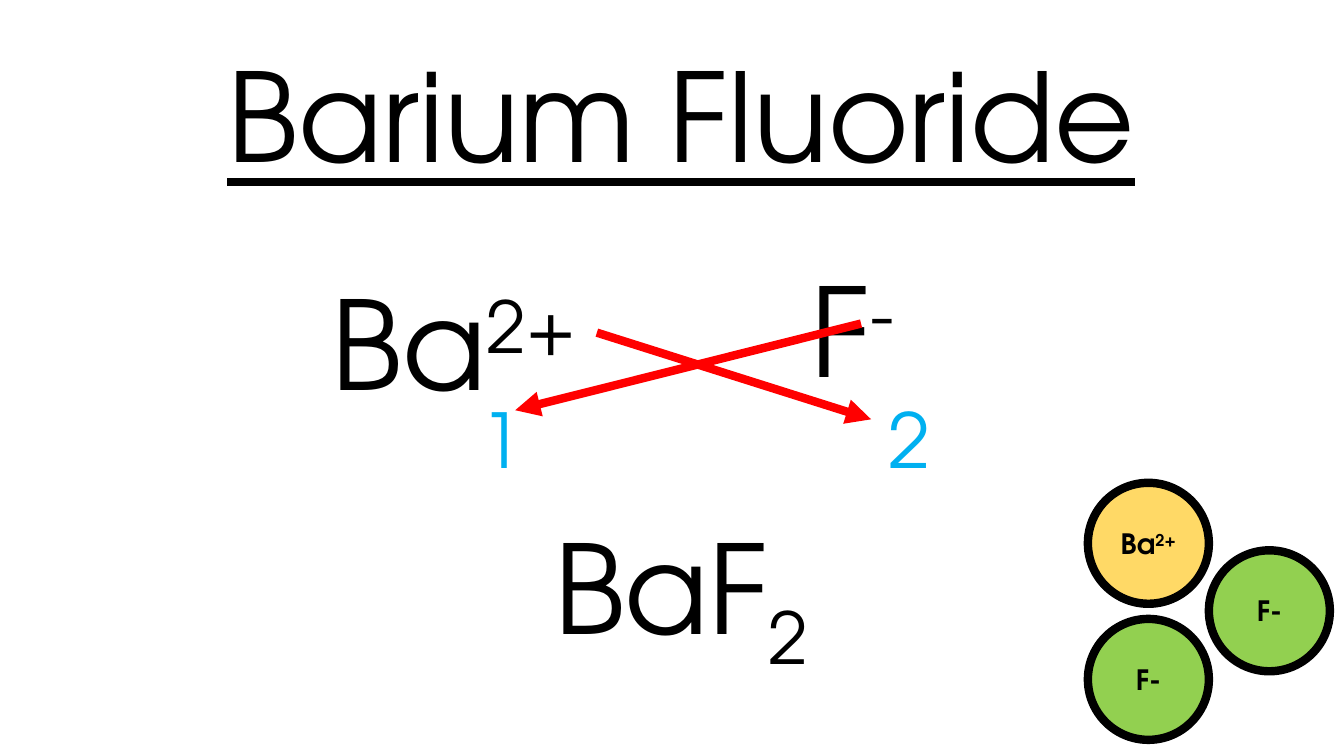
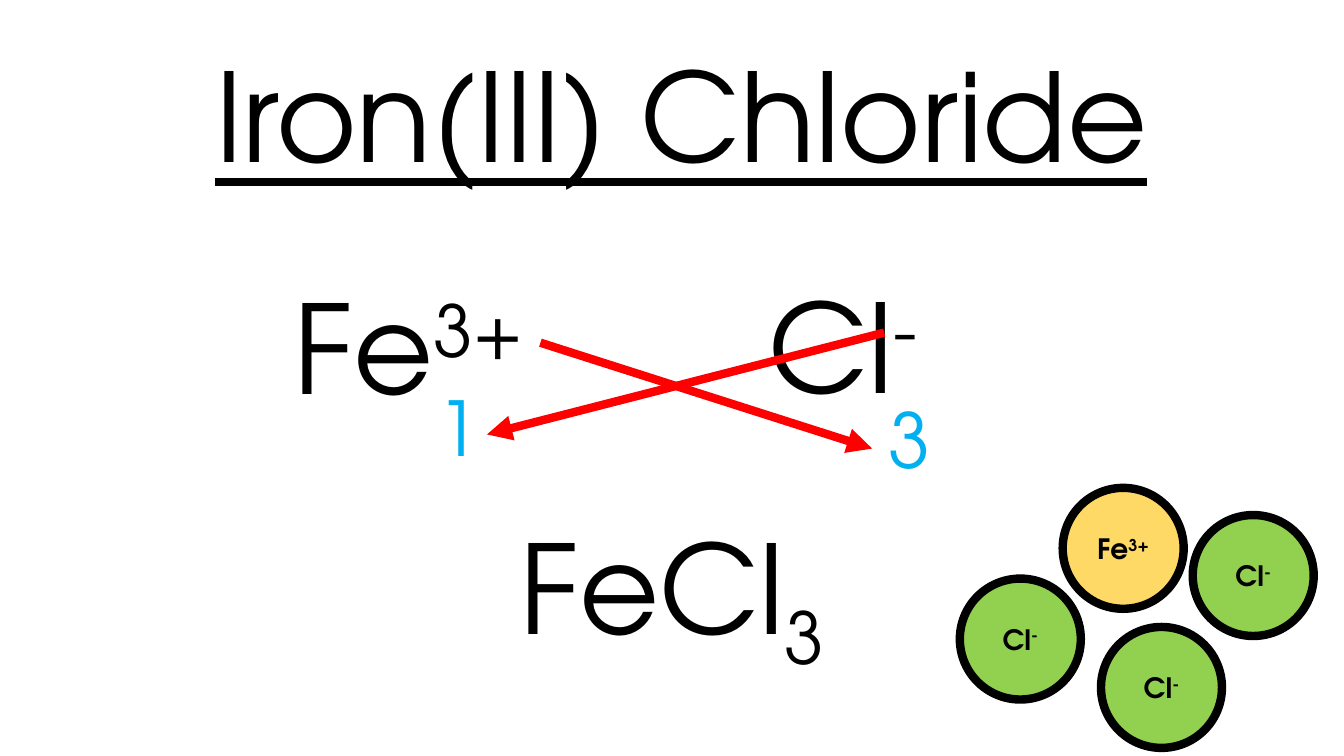
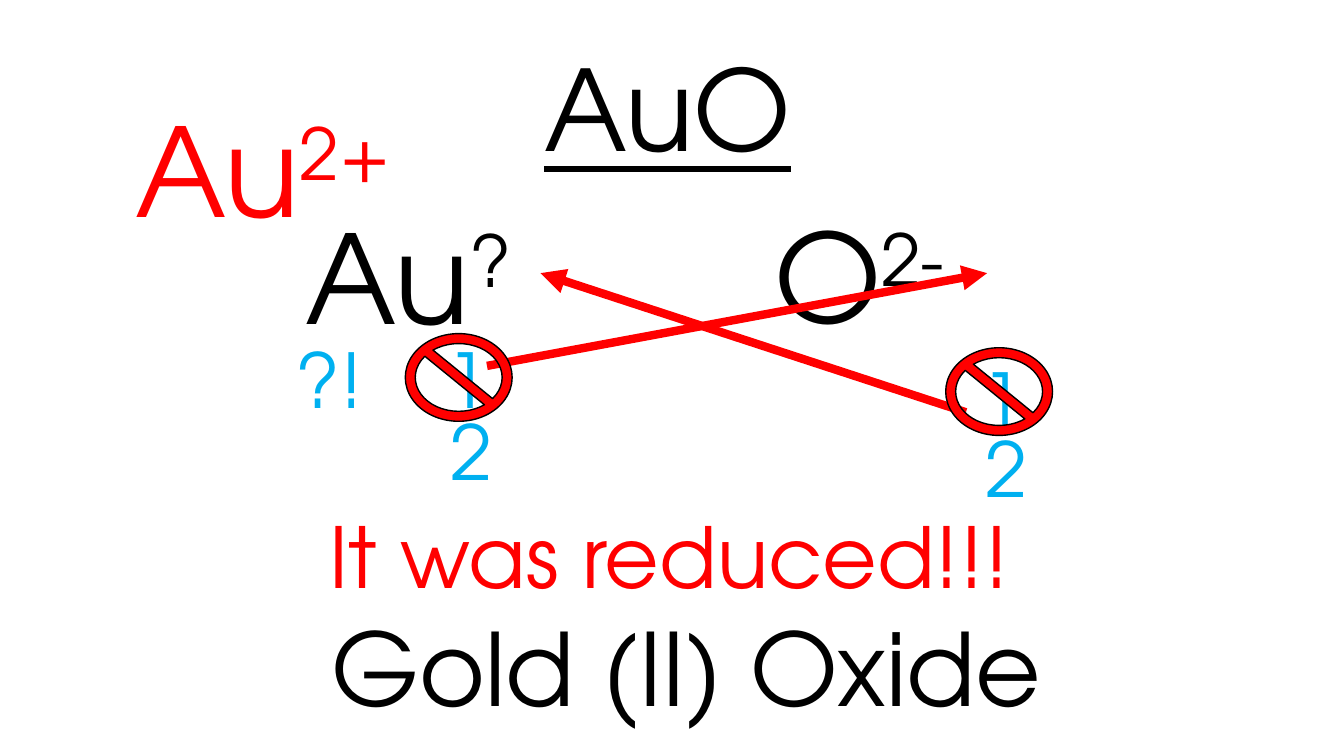
"""Builds three slides on working out ionic formulas by crossing charges."""
from lxml import etree
from pptx import Presentation
from pptx.dml.color import RGBColor
from pptx.enum.shapes import MSO_CONNECTOR, MSO_SHAPE
from pptx.enum.text import MSO_ANCHOR, MSO_AUTO_SIZE, PP_ALIGN
from pptx.oxml.ns import qn
from pptx.util import Inches, Pt

STRAIGHT = MSO_CONNECTOR.STRAIGHT
OVAL, BAN = MSO_SHAPE.OVAL, MSO_SHAPE.NO_SYMBOL
TOP, MIDDLE = MSO_ANCHOR.TOP, MSO_ANCHOR.MIDDLE
FIT = MSO_AUTO_SIZE.SHAPE_TO_FIT_TEXT
CENTER, RIGHT = PP_ALIGN.CENTER, PP_ALIGN.RIGHT

FONT = "TeX Gyre Adventor"
COLORS = {
    "ink": "000000",
    "alert": "FF0000",
    "digit": "00B0F0",
    "cation": "FFD966",
    "anion": "92D050",
}
BASELINES = {"^": "30000", "_": "-25000"}
HEIGHTS = {54: 1.01, 60: 1.11, 72: 1.31, 80: 1.45, 88: 1.58}
TITLE_LEFT, TITLE_TOP = 0.09, 0.34
SLIDE_WIDTH, SLIDE_HEIGHT = 13.33, 7.5
ION_DIAMETER = 1.2
DIGIT_WIDTH = 3.49
BAN_WIDTH, BAN_HEIGHT = 1.06, 0.87


def color(name):
    """Return the named palette colour."""
    return RGBColor.from_string(COLORS[name])


def write(frame, text, size=88, ink="ink", align=CENTER, bold=False, underline=False):
    """Write one paragraph, with ^ raising and _ lowering what follows."""
    frame.word_wrap = True
    paragraph = frame.paragraphs[0]
    paragraph.alignment = align
    mark = next((m for m in BASELINES if m in text), None)
    base, _, script = text.partition(mark) if mark else (text, "", "")
    for part, baseline in ((base, None), (script, BASELINES.get(mark))):
        if not part:
            continue
        run = paragraph.add_run()
        run.text = part
        font = run.font
        font.name, font.size = FONT, Pt(size)
        font.bold, font.underline = bold, underline
        font.color.rgb = color(ink)
        if baseline:
            run._r.get_or_add_rPr().set("baseline", baseline)


def add_label(slide, left, top, width, text, size=88, **style):
    """Add a text box as tall as one line of its text size."""
    label = slide.shapes.add_textbox(
        Inches(left), Inches(top), Inches(width), Inches(HEIGHTS[size]))
    write(label.text_frame, text, size=size, **style)
    label.text_frame.auto_size = FIT


def add_figure(slide, preset, left, top, width, height, fill, line_width):
    """Add a filled preset shape with a black outline."""
    figure = slide.shapes.add_shape(
        preset, Inches(left), Inches(top), Inches(width), Inches(height))
    figure.shadow.inherit = False
    figure.fill.solid()
    figure.fill.fore_color.rgb = color(fill)
    figure.line.color.rgb = color("ink")
    figure.line.width = Pt(line_width)
    return figure


def add_arrow(slide, start, end):
    """Add a thick red arrow between two points."""
    arrow = slide.shapes.add_connector(STRAIGHT, *map(Inches, (*start, *end)))
    arrow.line.color.rgb = color("alert")
    arrow.line.width = Pt(6)
    etree.SubElement(arrow.line._get_or_add_ln(), qn("a:tailEnd"), type="triangle")
    etree.SubElement(arrow._element.spPr, qn("a:effectLst"))


def titled_slide(deck, text, size=88, width=SLIDE_WIDTH):
    """Add a title-only slide with a large underlined title."""
    slide = deck.slides.add_slide(deck.slide_layouts[5])
    title = slide.shapes.title
    title.left, title.top = Inches(TITLE_LEFT), Inches(TITLE_TOP)
    title.width, title.height = Inches(width), Inches(HEIGHTS[size])
    frame = title.text_frame
    frame.vertical_anchor = TOP
    frame.auto_size = FIT
    write(frame, text, size=size, underline=True)
    return slide


def crossover(slide, left, top, ions, arrows, digits):
    """Place two ions, the crossing arrows and the digits from a corner."""
    for x, y, width, text in ions:
        add_label(slide, left + x, top + y, width, text)
    for ends in arrows:
        add_arrow(slide, *((left + x, top + y) for x, y in ends))
    for x, y, text in digits:
        add_label(slide, left + x, top + y, DIGIT_WIDTH, text, size=54, ink="digit")


def ion_cluster(slide, left, top, cation, anion, anion_offsets):
    """Place the cation at a corner and the anions around it."""
    ions = [(0, 0, cation, "cation")]
    ions += [(x, y, anion, "anion") for x, y in anion_offsets]
    for x, y, text, fill in ions:
        ion = add_figure(
            slide, OVAL, left + x, top + y, ION_DIAMETER, ION_DIAMETER, fill, 6)
        ion.text_frame.vertical_anchor = MIDDLE
        write(ion.text_frame, text, size=20, bold=True)


def corrected_digit(slide, left, top, digit_left, digit_top):
    """Strike out a digit and write its replacement below."""
    add_label(slide, digit_left, digit_top, 2.84, "2", size=54, ink="digit", align=RIGHT)
    sign = add_figure(slide, BAN, left, top, BAN_WIDTH, BAN_HEIGHT, "alert", 1)
    sign.adjustments[0] = 0.114


def barium_fluoride(deck):
    """Build the barium fluoride slide."""
    slide = titled_slide(deck, "Barium Fluoride")
    crossover(
        slide, 2.76, 2.47,
        ions=[(0, 0.13, 3.49, "Ba^2+"), (3.95, 0, 3.49, "F^-")],
        arrows=[((3.16, 0.83), (5.88, 1.69)), ((5.78, 0.74), (2.35, 1.6))],
        digits=[(0.47, 1.38, "1"), (4.51, 1.38, "2")])
    add_label(slide, 5.01, 5.02, 3.49, "BaF_2")
    ion_cluster(slide, 10.79, 4.79, "Ba^2+", "F-", [(1.2, 0.67), (0, 1.35)])


def iron_chloride(deck):
    """Build the iron(III) chloride slide."""
    slide = titled_slide(deck, "Iron(III) Chloride")
    crossover(
        slide, 1.49, 2.63,
        ions=[(0, 0.01, 5.13, "Fe^3+"), (4.8, 0, 4.14, "Cl^-")],
        arrows=[((3.87, 0.77), (7.16, 1.82)), ((7.28, 0.67), (3.34, 1.68))],
        digits=[(1.31, 1.1, "1"), (5.78, 1.22, "3")])
    add_label(slide, 0, 5.02, SLIDE_WIDTH, "FeCl_3")
    ion_cluster(
        slide, 10.54, 4.84, "Fe^3+", "Cl^-",
        [(1.29, 0.27), (0.38, 1.38), (-1.02, 0.9)])


def gold_oxide(deck):
    """Build the gold(II) oxide slide."""
    slide = titled_slide(deck, "AuO", size=80, width=13.06)
    crossover(
        slide, 1.49, 1.94,
        ions=[(0, 0.01, 5.13, "Au^?"), (4.8, 0, 4.47, "O^2-")],
        arrows=[((8.09, 2.15), (3.87, 0.77)), ((3.34, 1.69), (8.3, 0.77))],
        digits=[(0.03, 1.31, "?!"), (1.4, 1.31, "1"), (6.71, 1.51, "1")])
    add_label(slide, 0.09, 4.96, SLIDE_WIDTH, "It was reduced!!! ", size=60, ink="alert")
    add_label(slide, 0.14, 5.96, SLIDE_WIDTH, "Gold (II) Oxide", size=72)
    corrected_digit(slide, 4.02, 3.31, 2.14, 3.97)
    corrected_digit(slide, 9.38, 3.45, 7.45, 4.14)
    add_label(slide, 0.67, 0.89, 3.88, "Au^2+", ink="alert")


def main():
    """Build and save the deck."""
    deck = Presentation()
    deck.slide_width, deck.slide_height = Inches(SLIDE_WIDTH), Inches(SLIDE_HEIGHT)
    for build in (barium_fluoride, iron_chloride, gold_oxide):
        build(deck)
    deck.save("out.pptx")


if __name__ == "__main__":
    main()
